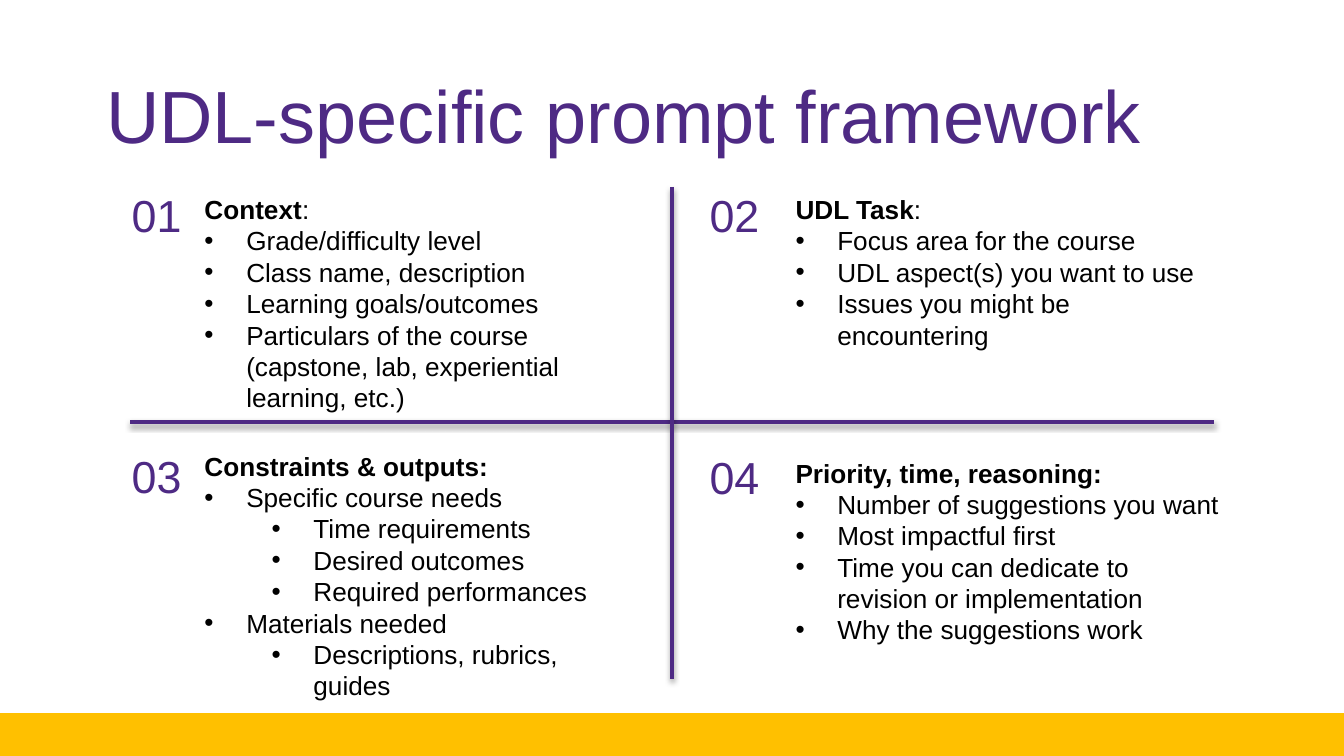
from lxml import etree
from pptx import Presentation
from pptx.dml.color import RGBColor
from pptx.enum.shapes import MSO_CONNECTOR, MSO_SHAPE
from pptx.enum.text import MSO_ANCHOR, MSO_AUTO_SIZE, PP_ALIGN
from pptx.oxml.ns import qn
from pptx.util import Cm, Pt

STRAIGHT, RECTANGLE = MSO_CONNECTOR.STRAIGHT, MSO_SHAPE.RECTANGLE
TOP, MIDDLE, LEFT = MSO_ANCHOR.TOP, MSO_ANCHOR.MIDDLE, PP_ALIGN.LEFT
NO_FIT, GROW = MSO_AUTO_SIZE.NONE, MSO_AUTO_SIZE.SHAPE_TO_FIT_TEXT

PURPLE, GOLD, BLACK = "4E2A84", "FFC000", "000000"
TITLE = "UDL-specific prompt framework"

# Each quadrant: number, its top, list top and height (cm),
# heading spans (text, bold), then items (level, text)
QUADRANTS = [
    ("01", 3.43, 3.53, 4.45, [("Context", True), (":", False)], [
        (0, "Grade/difficulty level"),
        (0, "Class name, description"),
        (0, "Learning goals/outcomes"),
        (0, "Particulars of the course (capstone, lab, experiential learning, etc.)"),
    ]),
    ("02", 3.43, 3.53, 3.25, [("UDL Task", True), (":", False)], [
        (0, "Focus area for the course"),
        (0, "UDL aspect(s) you want to use"),
        (0, "Issues you might be encountering"),
    ]),
    ("03", 8.36, 8.38, 5.05, [("Constraints & outputs:", True)], [
        (0, "Specific course needs"),
        (1, "Time requirements"),
        (1, "Desired outcomes"),
        (1, "Required performances"),
        (0, "Materials needed"),
        (1, "Descriptions, rubrics, guides"),
    ]),
    ("04", 8.38, 8.51, 3.84, [("Priority, time, reasoning:", True)], [
        (0, "Number of suggestions you want"),
        (0, "Most impactful first"),
        (0, "Time you can dedicate to revision or implementation"),
        (0, "Why the suggestions work"),
    ]),
]
NUMBER_LEFTS = (2.24, 13.16)
LIST_LEFTS = (3.61, 14.78)
DIVIDERS = [(2.46, 7.98, 22.94, 7.98), (12.7, 3.53, 12.7, 12.83)]


def color(value):
    return RGBColor.from_string(value)


def place(shape, left, top, width, height):
    shape.left, shape.top = Cm(left), Cm(top)
    shape.width, shape.height = Cm(width), Cm(height)


def set_format(target, values):
    for name, value in values.items():
        setattr(target, name, value)


def add_span(para, text, size, value, bold=False):
    span = para.add_run()
    span.text = text
    set_format(span.font, {"name": "Arial", "size": Pt(size), "bold": bold})
    span.font.color.rgb = color(value)


def set_bullet(para, level=None):
    """Give a hanging bullet at the level, or none when level is None."""
    props = para._p.get_or_add_pPr()
    if level is None:
        props.set("marL", "0")
        props.set("indent", "0")
        etree.SubElement(props, qn("a:buNone"))
        return
    para.level = level
    props.set("marL", str(Cm(0.79 + 1.27 * level)))
    props.set("indent", str(-Cm(0.79)))
    etree.SubElement(props, qn("a:buFont")).set("typeface", "Arial")
    etree.SubElement(props, qn("a:buChar")).set("char", "•")


def fill_list(box, heading, items):
    frame = box.text_frame
    set_format(frame, {"word_wrap": True, "auto_size": NO_FIT, "vertical_anchor": TOP})
    rows = [(None, heading)] + [(level, [(text, False)]) for level, text in items]
    for index, (level, spans) in enumerate(rows):
        para = frame.add_paragraph() if index else frame.paragraphs[0]
        set_format(para, {"space_before": Pt(0), "alignment": LEFT})
        set_bullet(para, level)
        for text, bold in spans:
            add_span(para, text, 14, BLACK, bold)


def add_divider(page, ends):
    line = page.shapes.add_connector(STRAIGHT, *map(Cm, ends))
    line.line.color.rgb = color(PURPLE)
    line.line.width = Pt(2)
    effects = etree.SubElement(line._element.spPr, qn("a:effectLst"))
    shadow = etree.SubElement(effects, qn("a:outerShdw"), blurRad=str(Pt(3.1)),
                              dist=str(Pt(1.6)), dir="5400000", rotWithShape="0")
    tint = etree.SubElement(shadow, qn("a:srgbClr"), val=BLACK)
    etree.SubElement(tint, qn("a:alpha"), val="38000")


def main():
    deck = Presentation()
    deck.slide_width, deck.slide_height = Cm(25.4), Cm(14.29)
    page = deck.slides.add_slide(deck.slide_layouts.get_by_name("Comparison"))
    title, *lists = [box for box in page.placeholders if box.placeholder_format.idx < 10]

    bar = page.shapes.add_shape(RECTANGLE, 0, 0, 0, 0)
    place(bar, -0.08, 13.48, 25.48, 0.81)
    bar.shadow.inherit = False
    bar.fill.solid()
    bar.fill.fore_color.rgb = color(GOLD)
    bar.line.fill.background()

    place(title, 1.75, 0.76, 21.9, 2.77)
    set_format(title.text_frame, {"auto_size": NO_FIT, "vertical_anchor": MIDDLE})
    heading_para = title.text_frame.paragraphs[0]
    heading_para.alignment = LEFT
    add_span(heading_para, TITLE, 39.6, PURPLE)

    add_divider(page, DIVIDERS[0])
    for index, (number, number_top, top, height, heading, items) in enumerate(QUADRANTS):
        column = index % 2
        label = page.shapes.add_textbox(0, 0, 0, 0)
        place(label, NUMBER_LEFTS[column], number_top, 1.47, 1.27)
        set_format(label.text_frame, {"word_wrap": False, "auto_size": GROW})
        add_span(label.text_frame.paragraphs[0], number, 24, PURPLE)
        place(lists[index], LIST_LEFTS[column], top, 8.64, height)
        fill_list(lists[index], heading, items)
    add_divider(page, DIVIDERS[1])

    deck.save("out.pptx")


if __name__ == "__main__":
    main()
